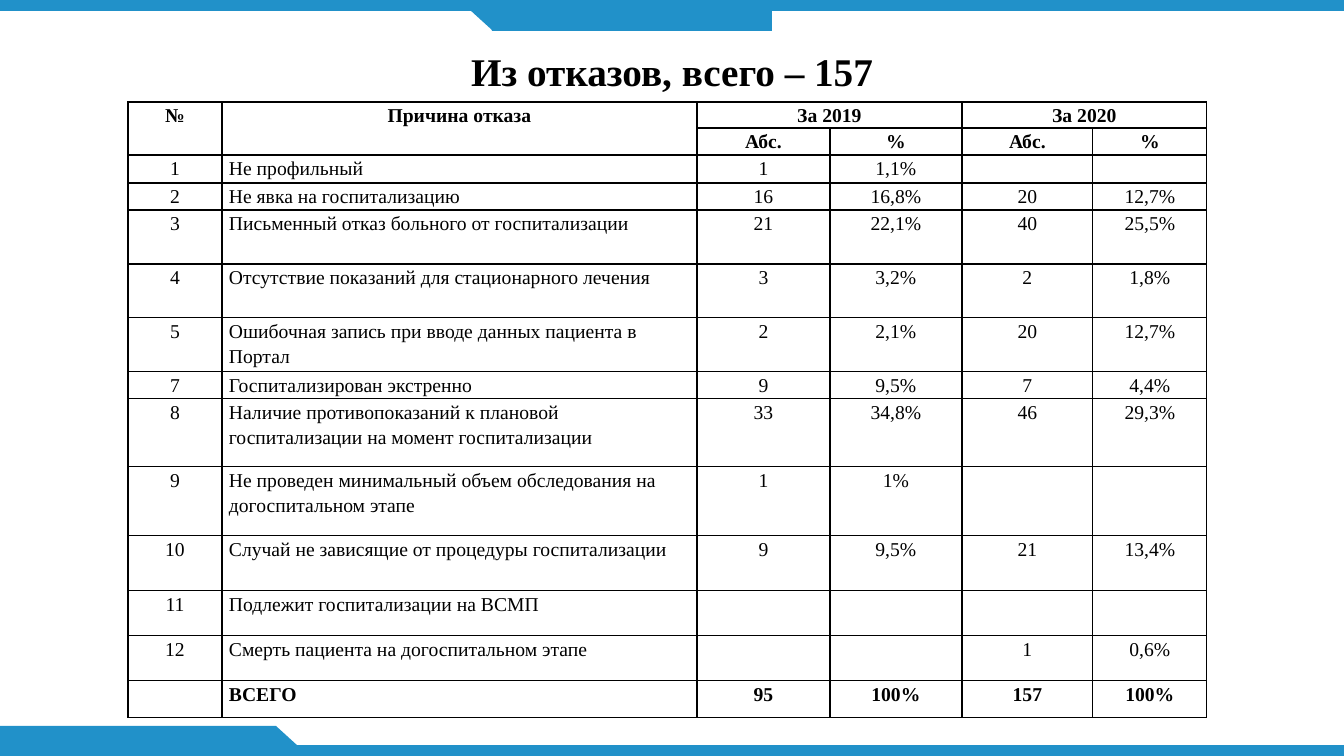
from lxml import etree
from pptx import Presentation
from pptx.dml.color import RGBColor
from pptx.enum.shapes import MSO_SHAPE
from pptx.enum.text import MSO_ANCHOR, MSO_AUTO_SIZE, PP_ALIGN
from pptx.oxml import parse_xml
from pptx.oxml.ns import nsdecls, qn
from pptx.util import Pt

RECT, TRIANGLE = MSO_SHAPE.RECTANGLE, MSO_SHAPE.FLOWCHART_MERGE
LEFT, CENTER = PP_ALIGN.LEFT, PP_ALIGN.CENTER
SCALE = 914400 / 100.8
BLUE, BLACK = "2191C9", "000000"
FONT = "Times New Roman"


def px(length):
    return round(length * SCALE)


def style(para, size, bold, align):
    para.alignment = align
    for span in para.runs:
        span.font.name = FONT
        span.font.size = Pt(size)
        span.font.bold = bold
        span.font.color.rgb = RGBColor.from_string(BLACK)


deck = Presentation()
deck.slide_width, deck.slide_height = px(1344), px(756)
page = deck.slides.add_slide(deck.slide_layouts[5])

# Blue bands with slanted tabs at the top and bottom
bands = [
    (RECT, 0, 0, 1344, 11, 0),
    (RECT, 0, 745, 1344, 11, 0),
    (RECT, 492, 1, 280, 30, 0),
    (TRIANGLE, 459, 0, 66, 30, 0),
    (RECT, -4, 726, 280, 30, 0),
    (TRIANGLE, 243, 726, 66, 30, 180),
]
for kind, left, top, width, height, angle in bands:
    band = page.shapes.add_shape(kind, px(left), px(top), px(width), px(height))
    band.rotation = angle
    band.shadow.inherit = False
    band.fill.solid()
    band.fill.fore_color.rgb = RGBColor.from_string(BLUE)
    band.line.fill.background()

# Title
title = page.shapes.title
title.left, title.top, title.width, title.height = px(0), px(44), px(1344), px(54)
frame = title.text_frame
frame.text = "Из отказов, всего – 157"
frame.word_wrap = True
frame.auto_size = MSO_AUTO_SIZE.NONE
frame.vertical_anchor = MSO_ANCHOR.MIDDLE
style(frame.paragraphs[0], 28, True, CENTER)

# Table of refusal reasons
rows = [
    ("№", "Причина отказа", "За 2019", "", "За 2020", ""),
    ("", "", "Абс.", "%", "Абс.", "%"),
    ("1", "Не профильный", "1", "1,1%", "", ""),
    ("2", "Не явка на госпитализацию", "16", "16,8%", "20", "12,7%"),
    ("3", "Письменный отказ больного от госпитализации", "21", "22,1%", "40", "25,5%"),
    ("4", "Отсутствие показаний для стационарного лечения", "3", "3,2%", "2", "1,8%"),
    ("5", "Ошибочная запись при вводе данных пациента в Портал", "2", "2,1%", "20", "12,7%"),
    ("7", "Госпитализирован экстренно", "9", "9,5%", "7", "4,4%"),
    ("8", "Наличие противопоказаний к плановой госпитализации на момент госпитализации",
     "33", "34,8%", "46", "29,3%"),
    ("9", "Не проведен минимальный объем обследования на догоспитальном этапе",
     "1", "1%", "", ""),
    ("10", "Случай не зависящие от процедуры госпитализации", "9", "9,5%", "21", "13,4%"),
    ("11", "Подлежит госпитализации на ВСМП", "", "", "", ""),
    ("12", "Смерть пациента на догоспитальном этапе", "", "", "1", "0,6%"),
    ("", "ВСЕГО", "95", "100%", "157", "100%"),
]
widths = [94, 475, 133, 132, 131, 114]
heights = [26, 27, 28, 27, 54, 54, 54, 27, 68, 69, 55, 45, 45, 37]
table = page.shapes.add_table(
    len(rows), len(widths), px(128), px(102), px(sum(widths)), px(sum(heights))
).table
table.first_row = table.horz_banding = False
for column, width in zip(table.columns, widths):
    column.width = px(width)
for row, height in zip(table.rows, heights):
    row.height = px(height)

bold_rows = (0, 1, len(rows) - 1)
for row_index, values in enumerate(rows):
    for column_index, value in enumerate(values):
        cell = table.cell(row_index, column_index)
        cell.margin_left = cell.margin_right = px(7)
        cell.margin_top = cell.margin_bottom = 0
        cell.text_frame.text = value
        para = cell.text_frame.paragraphs[0]
        para.line_spacing = 1.15
        is_reason = column_index == 1 and row_index > 1
        style(para, 14, row_index in bold_rows, LEFT if is_reason else CENTER)
        if not value:
            # Keeps an empty cell from stretching its row
            etree.SubElement(para._p, qn("a:endParaRPr"), sz="1400")
        borders = cell._tc.get_or_add_tcPr()
        for side in ("lnL", "lnR", "lnT", "lnB"):
            borders.append(parse_xml(
                f'<a:{side} {nsdecls("a")} w="12700"><a:solidFill>'
                f'<a:srgbClr val="{BLACK}"/></a:solidFill></a:{side}>'
            ))
        cell.fill.background()

# Merged header cells
for first, last in [((0, 0), (1, 0)), ((0, 1), (1, 1)), ((0, 2), (0, 3)), ((0, 4), (0, 5))]:
    table.cell(*first).merge(table.cell(*last))

deck.save("out.pptx")
